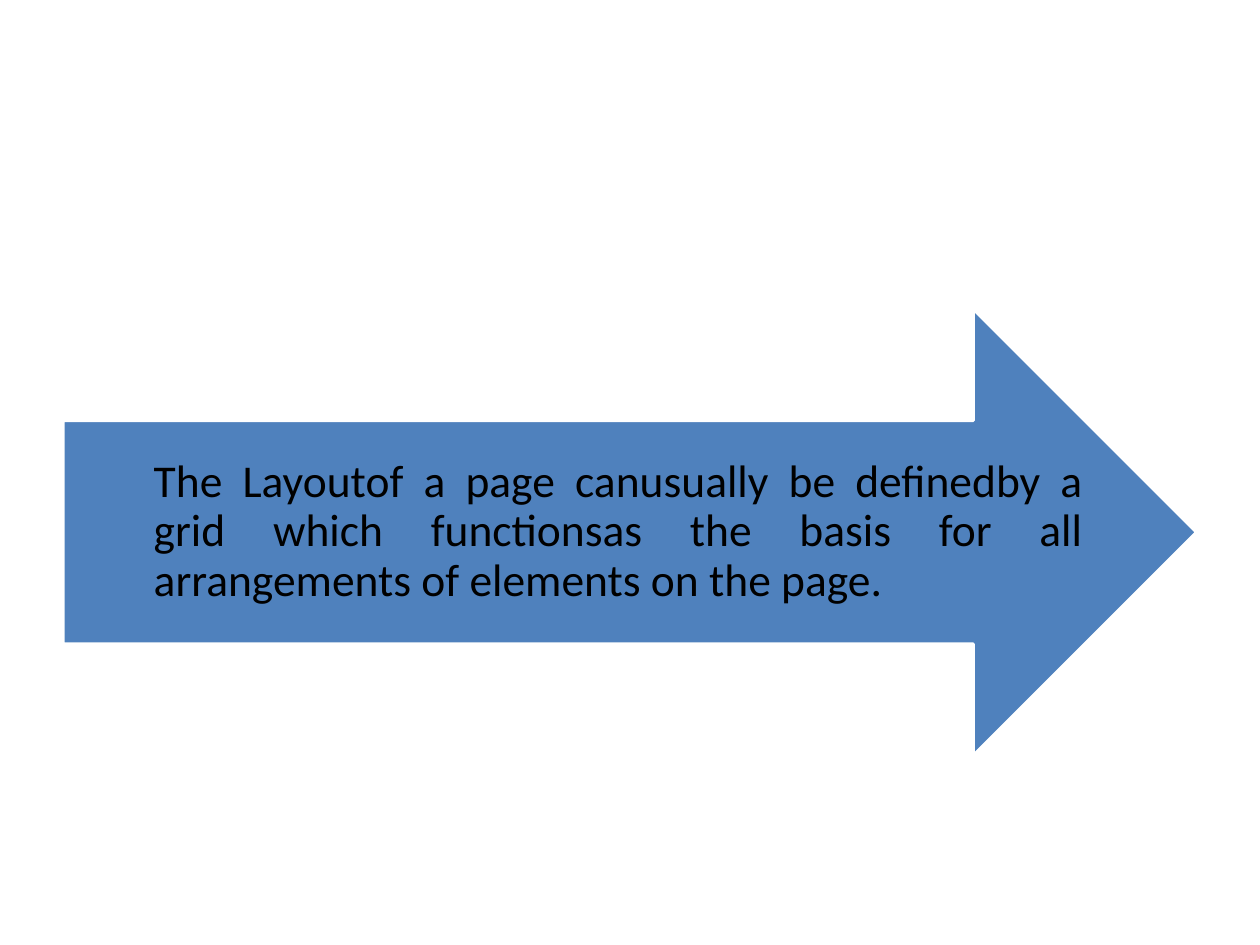
from pptx import Presentation
from pptx.dml.color import RGBColor
from pptx.enum.shapes import MSO_SHAPE as Shape
from pptx.enum.text import MSO_ANCHOR as Anchor, PP_ALIGN as Align
from pptx.util import Cm, Pt

BLUE = RGBColor(0x4F, 0x81, 0xBD)
WHITE = RGBColor(0xFF, 0xFF, 0xFF)
BLACK = RGBColor(0x00, 0x00, 0x00)

STATEMENT = (
    "The Layoutof a page canusually be definedby a grid which functionsas "
    "the basis for all arrangements of elements on the page."
)
FRAME_FORMAT = {
    "word_wrap": True,
    "vertical_anchor": Anchor.MIDDLE,
    "margin_left": 0,
    "margin_right": 0,
    "margin_top": Cm(0.74),
    "margin_bottom": Cm(0.74),
}
PARA_FORMAT = {
    "alignment": Align.JUSTIFY,
    "line_spacing": 0.9,
    "space_after": Pt(9),
}
FONT_FORMAT = {"name": "Calibri", "size": Pt(26)}


def apply_format(target, values):
    for name, value in values.items():
        setattr(target, name, value)


def add_arrow(page, left, top, width, height):
    arrow = page.shapes.add_shape(
        Shape.RIGHT_ARROW, Cm(left), Cm(top), Cm(width), Cm(height)
    )
    arrow.shadow.inherit = False
    arrow.fill.solid()
    arrow.fill.fore_color.rgb = BLUE
    arrow.line.color.rgb = WHITE
    arrow.line.width = Pt(2)


def add_statement(page, left, top, width, height):
    box = page.shapes.add_textbox(Cm(left), Cm(top), Cm(width), Cm(height))
    frame = box.text_frame
    apply_format(frame, FRAME_FORMAT)
    para = frame.paragraphs[0]
    apply_format(para, PARA_FORMAT)
    span = para.add_run()
    span.text = STATEMENT
    apply_format(span.font, FONT_FORMAT)
    span.font.color.rgb = BLACK


def add_arrow_statement(page, left, top, width, height):
    add_arrow(page, left, top, width, height)
    add_statement(
        page, left + width * 0.08, top + height / 4, width * 0.82, height / 2
    )


def main():
    deck = Presentation()
    apply_format(deck, {"slide_width": Cm(25.4), "slide_height": Cm(19.05)})
    page = deck.slides.add_slide(deck.slide_layouts[6])
    add_arrow_statement(page, 1.27, 6.22, 22.86, 9.02)
    deck.save("out.pptx")


if __name__ == "__main__":
    main()
